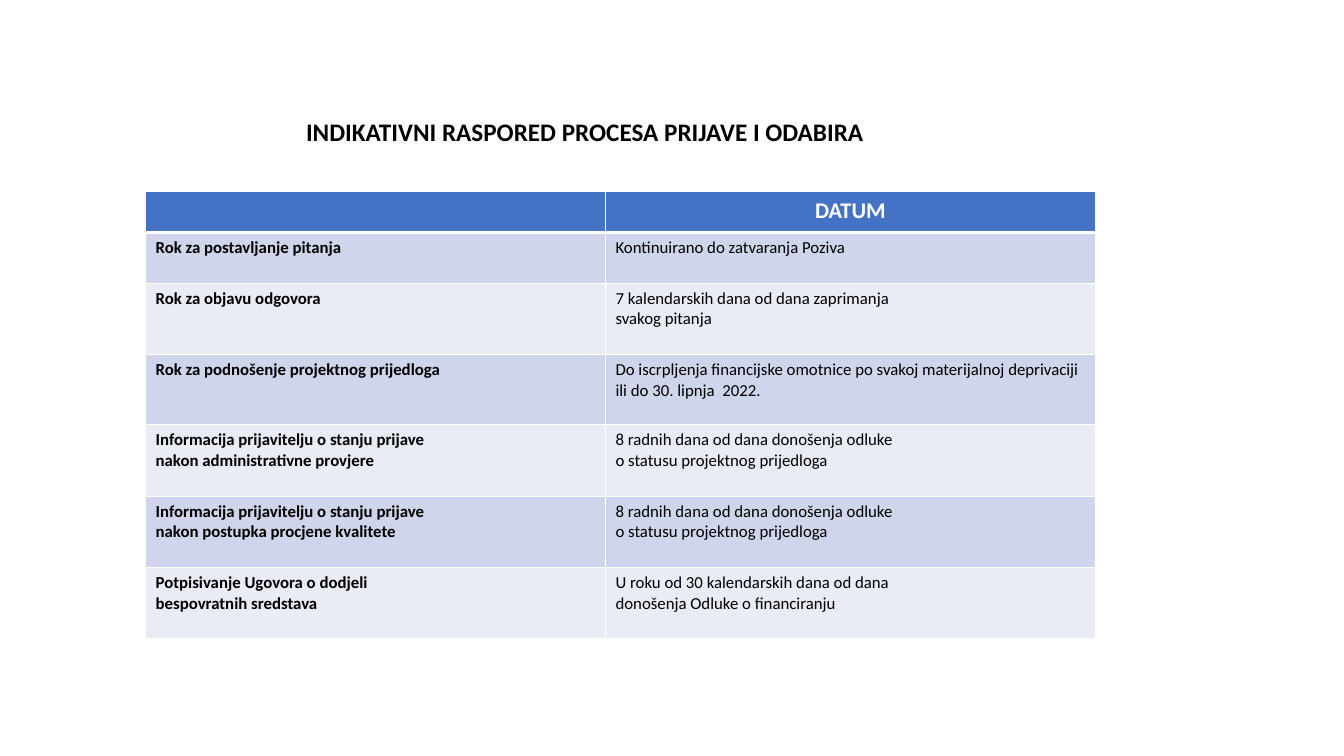
from dataclasses import dataclass
from lxml.etree import SubElement as Sub
from pptx import Presentation
from pptx.dml.color import RGBColor as RGB
from pptx.enum.text import MSO_ANCHOR as Anchor, PP_ALIGN as Align
from pptx.oxml.ns import qn
from pptx.util import Pt


@dataclass(frozen=True)
class Theme:
    font: str = "Calibri"
    ink: str = "000000"
    white: str = "FFFFFF"
    head: str = "4472C4"
    bands: tuple = ("CFD5EA", "E9EBF5")
    title: int = 18
    label: int = 16
    body: int = 12


THEME = Theme()
TITLE = "INDIKATIVNI RASPORED PROCESA PRIJAVE I ODABIRA"
STATUS = "8 radnih dana od dana donošenja odluke\no statusu projektnog prijedloga"
ROWS = [
    ("", "DATUM"),
    ("Rok za postavljanje pitanja", "Kontinuirano do zatvaranja Poziva"),
    ("Rok za objavu odgovora",
     "7 kalendarskih dana od dana zaprimanja\nsvakog pitanja"),
    ("Rok za podnošenje projektnog prijedloga",
     "Do iscrpljenja financijske omotnice po svakoj materijalnoj deprivaciji "
     "ili do 30. lipnja  2022."),
    ("Informacija prijavitelju o stanju prijave\nnakon administrativne provjere",
     STATUS),
    ("Informacija prijavitelju o stanju prijave\nnakon postupka procjene kvalitete",
     STATUS),
    ("Potpisivanje Ugovora o dodjeli\nbespovratnih sredstava",
     "U roku od 30 kalendarskih dana od dana\ndonošenja Odluke o financiranju"),
]
WIDTHS = (328.5, 350)
HEIGHTS = (29, 36.5, 51, 50, 51, 51, 51)


def write(frame, text, size, color, bold, align):
    frame.text = text
    for para in frame.paragraphs:
        para.alignment = align
        font = para.font
        look = {"name": THEME.font, "size": Pt(size), "bold": bold}
        for key, value in look.items():
            setattr(font, key, value)
        font.color.rgb = RGB.from_string(color)


def add_title(slide):
    title = slide.shapes.title
    place = {"left": -27.5, "top": 72, "width": 890.5, "height": 56}
    for key, value in place.items():
        setattr(title, key, Pt(value))
    frame = title.text_frame
    write(frame, TITLE, THEME.title, THEME.ink, True, Align.CENTER)
    frame.word_wrap = True
    frame.vertical_anchor = Anchor.BOTTOM
    frame.margin_bottom = Pt(23)
    frame.paragraphs[0].line_spacing = 0.9


def edge(cell, sides):
    """Draw white cell borders from a dict of side to width in points."""
    props = cell._tc.get_or_add_tcPr()
    for side, width in sides.items():
        line = Sub(props, qn(f"a:ln{side}"), w=str(Pt(width)))
        Sub(Sub(line, qn("a:solidFill")), qn("a:srgbClr"), val=THEME.white)


def add_cell(cell, text, row, col):
    head = row == 0
    edge(cell, {"L": 1, "R": 1, "T": 3 if row == 1 else 1, "B": 3 if head else 1})
    cell.fill.solid()
    fill = THEME.head if head else THEME.bands[(row - 1) % 2]
    cell.fill.fore_color.rgb = RGB.from_string(fill)
    write(cell.text_frame, text,
          THEME.label if head else THEME.body,
          THEME.white if head else THEME.ink,
          head or col == 0,
          Align.CENTER if head else Align.LEFT)


def add_dates(slide):
    table = slide.shapes.add_table(
        len(ROWS), len(WIDTHS), Pt(104), Pt(137),
        Pt(sum(WIDTHS)), Pt(sum(HEIGHTS))).table
    for col, width in zip(table.columns, WIDTHS):
        col.width = Pt(width)
    for row, height in zip(table.rows, HEIGHTS):
        row.height = Pt(height)
    for r, texts in enumerate(ROWS):
        for c, text in enumerate(texts):
            add_cell(table.cell(r, c), text, r, c)


def main():
    deck = Presentation()
    deck.slide_width, deck.slide_height = Pt(960), Pt(540)
    slide = deck.slides.add_slide(deck.slide_layouts.get_by_name("Title Only"))
    add_title(slide)
    add_dates(slide)
    deck.save("out.pptx")


if __name__ == "__main__":
    main()
